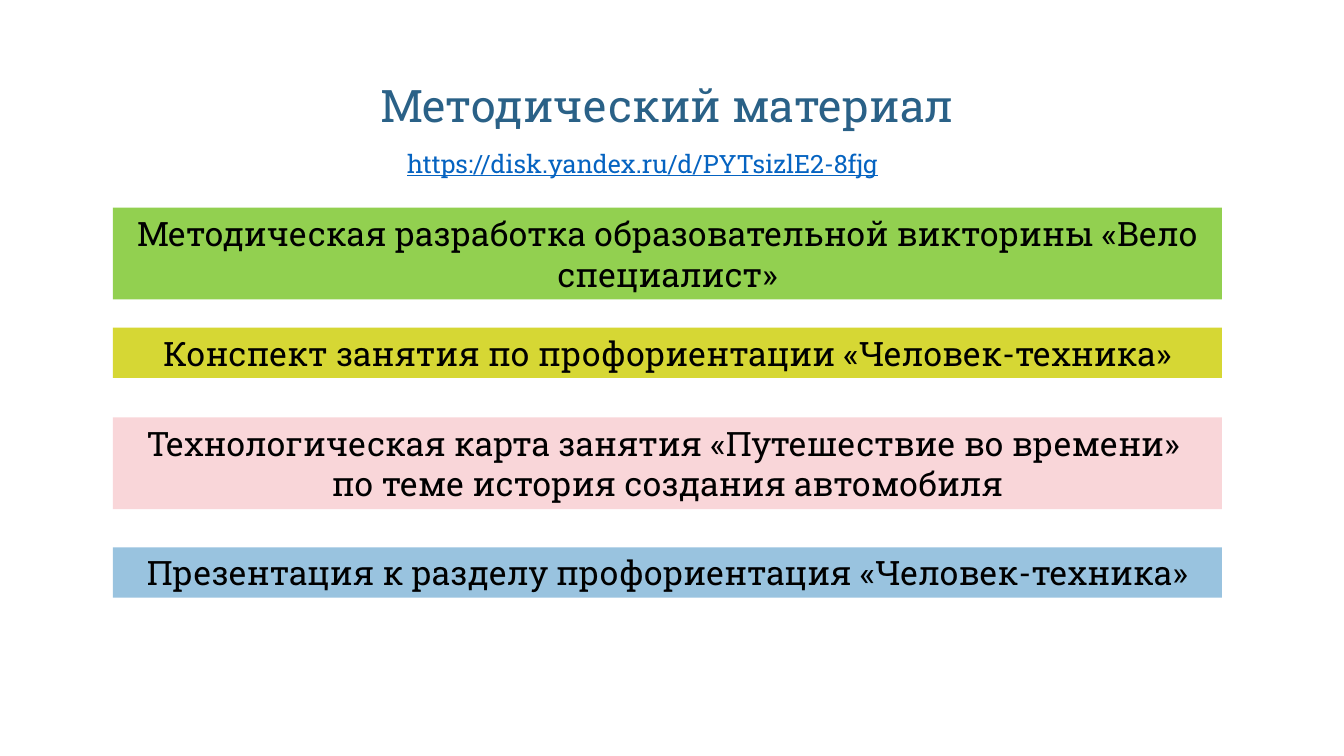
"""Builds a slide listing teaching materials in four coloured bars."""
import pptx
import pptx.dml.color
import pptx.enum.shapes
import pptx.enum.text
import pptx.util

Inches = pptx.util.Inches
ALIGN = pptx.enum.text.PP_ALIGN
ANCHOR = pptx.enum.text.MSO_ANCHOR
COLORS = {
    "title": "2A6187", "link": "0563C1", "text": "000000",
    "green": "92D050", "yellow": "D6D734", "pink": "F9D6D9", "blue": "99C3DF",
}
FORMATS = {
    "title": {"size": pptx.util.Pt(32)},
    "link": {"size": pptx.util.Pt(18), "underline": True},
    "text": {"size": pptx.util.Pt(24)},
}
BAR_LEFT, BAR_WIDTH = 1.12, 11
BAR_HEIGHTS = {1: 0.5, 2: 0.91}
BARS = [
    ("green", 2.06, 2, ["Методическая разработка образовательной викторины «Вело специалист»"]),
    ("yellow", 3.25, 1, ["Конспект занятия по профориентации «Человек-техника»"]),
    ("pink", 4.14, 2, ["Технологическая карта занятия «Путешествие во времени» ",
                       "по теме история создания автомобиля"]),
    ("blue", 5.43, 1, ["Презентация к разделу профориентация «Человек-техника»"]),
]


def place(sp, *box):
    for name, value in zip(("left", "top", "width", "height"), box):
        setattr(sp, name, Inches(value))


def write(tf, lines, role, align, anchor):
    tf.word_wrap = True
    tf.auto_size = pptx.enum.text.MSO_AUTO_SIZE.NONE
    tf.vertical_anchor = anchor
    for i, line in enumerate(lines):
        p = tf.add_paragraph() if i else tf.paragraphs[0]
        p.alignment = align
        r = p.add_run()
        r.text = line
        r.font.name = "Roboto Slab"
        r.font.color.rgb = pptx.dml.color.RGBColor.from_string(COLORS[role])
        for name, value in FORMATS[role].items():
            setattr(r.font, name, value)


prs = pptx.Presentation()
prs.slide_width, prs.slide_height = Inches(13.33), Inches(7.5)
s = prs.slides.add_slide(prs.slide_layouts[5])

title = s.shapes.title
place(title, 0.83, 0.78, 11.58, 0.84)
write(title.text_frame, ["Методический материал"], "title", ALIGN.CENTER, ANCHOR.TOP)
title.text_frame.paragraphs[0].line_spacing = 0.9

link = s.shapes.add_textbox(0, 0, 0, 0)
place(link, 3.94, 1.42, 5.38, 0.4)
write(link.text_frame, ["https://disk.yandex.ru/d/PYTsizlE2-8fjg"], "link", ALIGN.LEFT, ANCHOR.TOP)

for color, top, rows, lines in BARS:
    sp = s.shapes.add_shape(pptx.enum.shapes.MSO_SHAPE.RECTANGLE, 0, 0, 0, 0)
    place(sp, BAR_LEFT, top, BAR_WIDTH, BAR_HEIGHTS[rows])
    sp.shadow.inherit = False
    sp.fill.solid()
    sp.fill.fore_color.rgb = pptx.dml.color.RGBColor.from_string(COLORS[color])
    sp.line.fill.background()
    write(sp.text_frame, lines, "text", ALIGN.CENTER, ANCHOR.MIDDLE)

prs.save("out.pptx")
